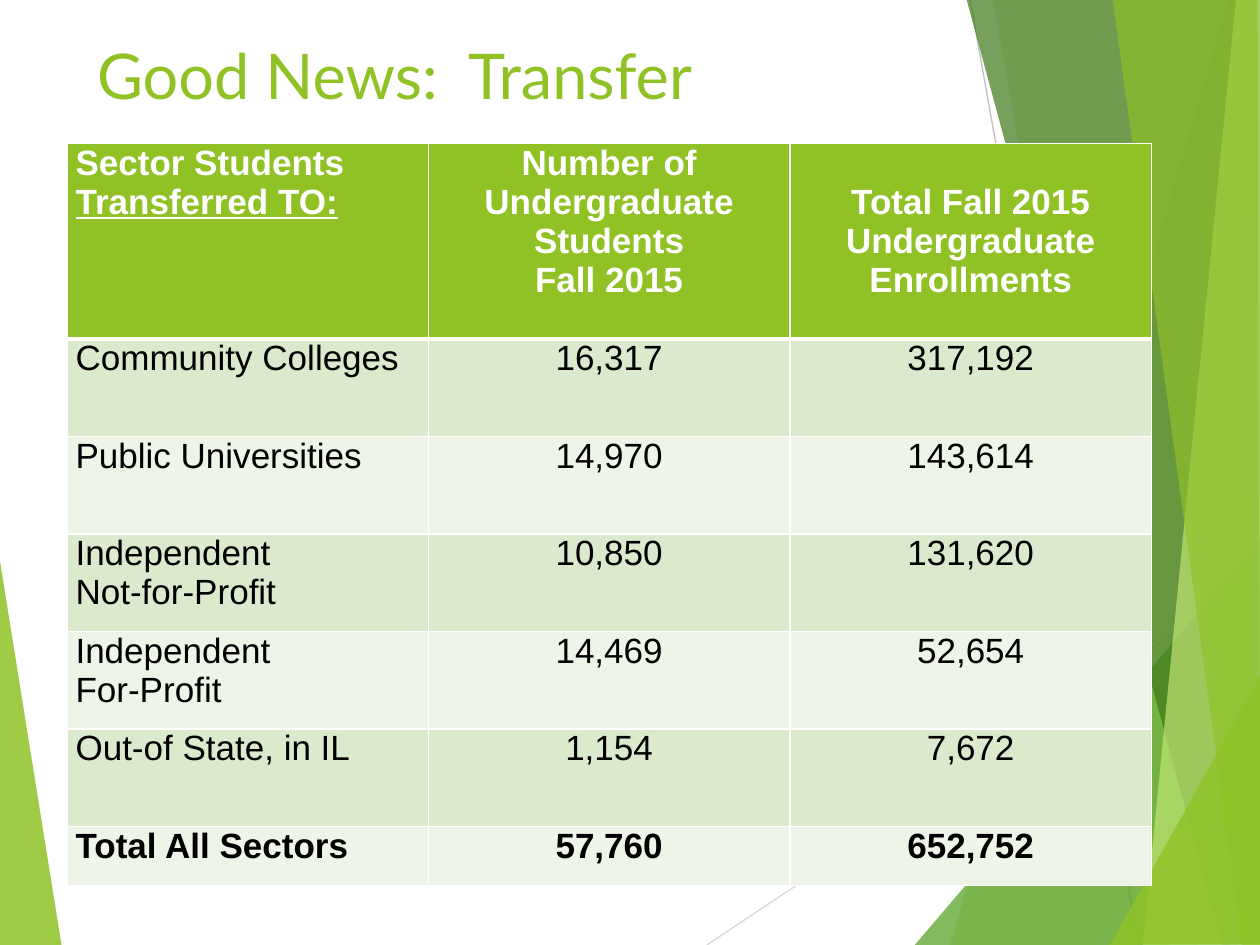
from dataclasses import dataclass

from lxml.etree import SubElement
from pptx import Presentation
from pptx.dml.color import RGBColor as Color
from pptx.enum.shapes import MSO_CONNECTOR as Connector
from pptx.enum.text import MSO_ANCHOR as Anchor, MSO_AUTO_SIZE as AutoSize, PP_ALIGN as Align
from pptx.oxml import parse_xml
from pptx.oxml.ns import nsdecls, qn
from pptx.util import Pt

PX = 9144


@dataclass(frozen=True)
class Theme:
    """Colours, fonts and type sizes of the deck."""
    lime: str = "90C226"
    green: str = "54A021"
    forest: str = "3F7819"
    pale: str = "C0E474"
    white: str = "FFFFFF"
    black: str = "000000"
    bands: tuple = ("DBE9CD", "EEF4E8")
    rays: tuple = ("D9D9D9", "BFBFBF")
    title_font: str = "Lato"
    body_font: str = "Arial"
    title_size: int = 36
    body_size: int = 20


THEME = Theme()

RAYS = [((561, 750), (1001, 457)), ((770, 0), (904, 750))]

FACETS = [
    ([(-1, 439), (49, 751), (-1, 750)], THEME.lime, 85),
    ([(975, 0), (754, 750), (1002, 751), (1001, 1)], THEME.lime, 30),
    ([(788, -1), (919, 750), (1001, 750), (1001, -1)], THEME.lime, 20),
    ([(726, 750), (1000, 429), (1001, 750)], THEME.green, 72),
    ([(767, -1), (970, 750), (1001, 749), (1001, -1)], THEME.forest, 70),
    ([(981, -1), (907, 750), (1001, 750), (1000, -1)], THEME.pale, 70),
    ([(883, -1), (986, 750), (1000, 750), (998, -1)], THEME.lime, 65),
    ([(881, 750), (1001, 535), (1001, 749)], THEME.lime, 80),
]

HEADINGS = [
    [[("Sector Students ", False), ("Transferred TO:", True)]],
    ["Number of Undergraduate", "Students", "Fall 2015"],
    ["Total Fall 2015 Undergraduate Enrollments"],
]

SECTORS = [
    (["Community Colleges"], 16317, 317192),
    (["Public Universities"], 14970, 143614),
    (["Independent", "Not-for-Profit"], 10850, 131620),
    (["Independent", "For-Profit"], 14469, 52654),
    (["Out-of State, in IL"], 1154, 7672),
    (["Total All Sectors"], 57760, 652752),
]


def apply(target, values):
    """Set every attribute named in a dict of format values."""
    for name, value in values.items():
        setattr(target, name, value)


def paint(fill, colour):
    """Make a fill solid in the given colour."""
    fill.solid()
    fill.fore_color.rgb = Color.from_string(colour)


def write(frame, paras, align, colour, values):
    """Fill a text frame; a paragraph is a string or (text, underlined) spans."""
    for index, spans in enumerate(paras):
        para = frame.paragraphs[0] if index == 0 else frame.add_paragraph()
        para.alignment = align
        for text, underlined in [(spans, False)] if isinstance(spans, str) else spans:
            span = para.add_run()
            span.text = text
            apply(span.font, {**values, "underline": underlined})
            span.font.color.rgb = Color.from_string(colour)


def add_ray(page, start, end, colour):
    """Draw one thin line of the backdrop."""
    ray = page.shapes.add_connector(Connector.STRAIGHT, *(v * PX for v in start + end))
    ray.line.color.rgb = Color.from_string(colour)
    ray.line.width = Pt(0.75)
    SubElement(ray._element.spPr, qn("a:effectLst"))


def add_facet(page, points, colour, opacity):
    """Draw one translucent polygon of the backdrop."""
    builder = page.shapes.build_freeform(*points[0], scale=PX)
    builder.add_line_segments(points[1:], close=True)
    facet = builder.convert_to_shape()
    facet.shadow.inherit = False
    facet.line.fill.background()
    paint(facet.fill, colour)
    tint = facet._element.spPr.find(qn("a:solidFill"))[0]
    SubElement(tint, qn("a:alpha"), val=str(opacity * 1000))


def add_backdrop(page):
    """Draw the faceted backdrop from back to front."""
    left, *right = FACETS
    add_facet(page, *left)
    for (start, end), colour in zip(RAYS, THEME.rays):
        add_ray(page, start, end, colour)
    for facet in right:
        add_facet(page, *facet)


def set_title(page, box, text):
    """Place and format the title placeholder."""
    title = page.shapes.title
    apply(title, dict(zip(("left", "top", "width", "height"), (v * PX for v in box))))
    frame = title.text_frame
    apply(frame, {"word_wrap": True, "auto_size": AutoSize.NONE, "vertical_anchor": Anchor.TOP})
    write(frame, [text], Align.LEFT, THEME.lime,
          {"name": THEME.title_font, "size": Pt(THEME.title_size), "bold": False})


def set_borders(cell, widths):
    """Give a cell white borders, keyed by side in schema order."""
    props = cell._tc.get_or_add_tcPr()
    for index, (side, width) in enumerate(widths.items()):
        props.insert(index, parse_xml(
            f'<a:ln{side} {nsdecls("a")} w="{Pt(width)}"><a:solidFill>'
            f'<a:srgbClr val="{THEME.white}"/></a:solidFill></a:ln{side}>'))


def set_cell(cell, paras, align, row, last):
    """Write and format one table cell according to its row."""
    head = row == 0
    apply(cell, {"margin_left": 7 * PX, "margin_right": 7 * PX, "margin_top": 0,
                 "margin_bottom": 0, "vertical_anchor": Anchor.TOP})
    paint(cell.fill, THEME.lime if head else THEME.bands[(row - 1) % 2])
    write(cell.text_frame, paras, align, THEME.white if head else THEME.black,
          {"name": THEME.body_font, "size": Pt(THEME.body_size), "bold": head or last})
    set_borders(cell, {"L": 1, "R": 1, "T": 1, "B": 3} if head else {"L": 1, "R": 1, "B": 1})


def add_transfer_table(page, box):
    """Build the transfer table inside its box."""
    left, top, width, height = box
    rows = [HEADINGS] + [[label, [f"{moved:,}"], [f"{total:,}"]]
                         for label, moved, total in SECTORS]
    table = page.shapes.add_table(len(rows), len(HEADINGS), *(v * PX for v in box)).table
    for column in table.columns:
        column.width = width * PX // len(HEADINGS)
    head, foot = 155, 47
    middle = (height - head - foot) * PX // (len(rows) - 2)
    heights = [head * PX] + [middle] * (len(rows) - 2) + [foot * PX]
    for row, (cells, tall) in enumerate(zip(rows, heights)):
        table.rows[row].height = tall
        label_align = Align.JUSTIFY if row else Align.LEFT
        for column, paras in enumerate(cells):
            align = Align.CENTER if column else label_align
            set_cell(table.cell(row, column), paras, align, row, row == len(rows) - 1)
    table.cell(0, len(HEADINGS) - 1).margin_top = 31 * PX


def main():
    """Build the deck and save it."""
    deck = Presentation()
    apply(deck, {"slide_width": 1000 * PX, "slide_height": 750 * PX})
    page = deck.slides.add_slide(deck.slide_layouts[5])
    paint(page.background.fill, THEME.white)
    add_backdrop(page)
    set_title(page, (67, 24, 694, 100), "Good News:  Transfer")
    add_transfer_table(page, (53, 114, 861, 589))
    deck.save("out.pptx")


if __name__ == "__main__":
    main()
